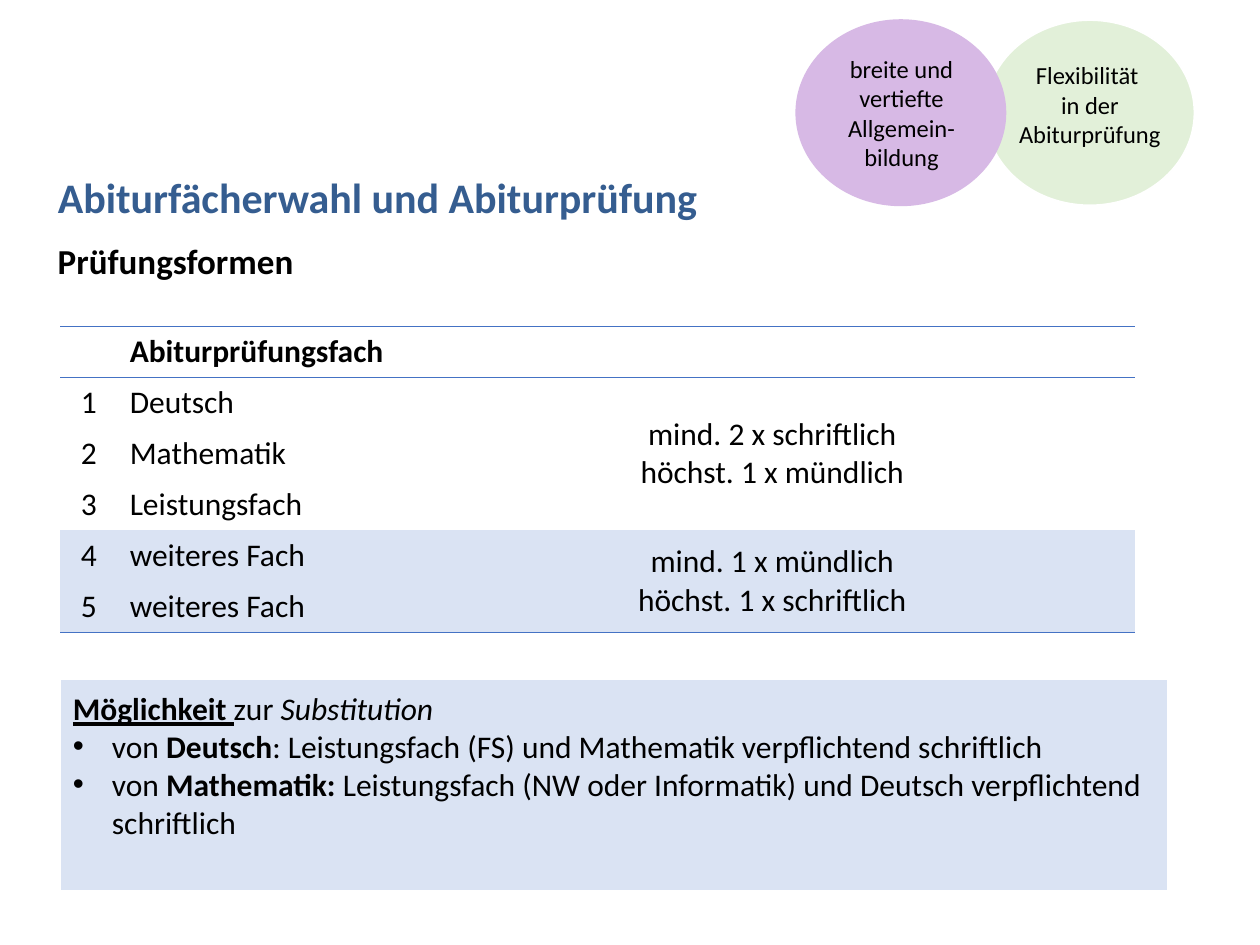
from lxml import etree
from pptx import Presentation
from pptx.dml.color import RGBColor
from pptx.enum.shapes import MSO_SHAPE
from pptx.enum.text import MSO_ANCHOR, MSO_AUTO_SIZE, PP_ALIGN
from pptx.oxml import parse_xml
from pptx.util import Inches, Pt

OVAL, RECT = MSO_SHAPE.OVAL, MSO_SHAPE.RECTANGLE
TOP, MID = MSO_ANCHOR.TOP, MSO_ANCHOR.MIDDLE
LEFT, CENTER = PP_ALIGN.LEFT, PP_ALIGN.CENTER
NS = "http://schemas.openxmlformats.org/drawingml/2006/main"
NO_GRID = "{2D5ABB26-0587-4C30-8999-92F81FD0307C}"
BLUE, PALE = "4472C4", "DAE3F3"


def color(text):
    return RGBColor.from_string(text)


def write(frame, paras, size, align=LEFT, anchor=TOP, tint="000000"):
    """Fill a frame with paragraphs, each a list of (text, font values)."""
    frame.word_wrap = True
    frame.vertical_anchor = anchor
    for i, runs in enumerate(paras):
        para = frame.paragraphs[0] if i == 0 else frame.add_paragraph()
        para.alignment = align
        for text, form in runs:
            # A line break inside a paragraph is a vertical tab
            for j, part in enumerate(text.split("\v")):
                if j:
                    para.add_line_break()
                run = para.add_run()
                run.text = part
                run.font.color.rgb = color(tint)
                base = {"name": "Calibri", "size": Pt(size)}
                for key, value in {**base, **form}.items():
                    setattr(run.font, key, value)


deck = Presentation()
deck.slide_width, deck.slide_height = Inches(10), Inches(7.5)
slide = deck.slides.add_slide(deck.slide_layouts[5])
shapes = slide.shapes
bold = {"bold": True}

# Headings
title = shapes.title
title.left, title.top = Inches(0.36), Inches(1.31)
title.width, title.height = Inches(9.37), Inches(0.87)
title.text_frame.auto_size = MSO_AUTO_SIZE.NONE
write(title.text_frame, [[("Abiturfächerwahl und Abiturprüfung", bold)]], 24, tint="355D90")
sub = shapes.add_textbox(Inches(0.36), Inches(1.85), Inches(9.05), Inches(0.44))
write(sub.text_frame, [[("Prüfungsformen", bold)]], 20)

# Table of exam subjects
names = ["Deutsch", "Mathematik", "Leistungsfach", "weiteres Fach", "weiteres Fach"]
frame = shapes.add_table(6, 3, Inches(0.48), Inches(2.59), Inches(8.53), Inches(2.43))
table = frame.table
table.first_row = table.horz_banding = False
frame.element.find(f".//{{{NS}}}tableStyleId").text = NO_GRID
for col, width in zip(table.columns, [0.45, 2.32, 5.76]):
    col.width = Inches(width)
for row in table.rows:
    row.height = Inches(0.405)

table.cell(0, 1).merge(table.cell(0, 2))
write(table.cell(0, 1).text_frame, [[("Abiturprüfungsfach", bold)]], 18)
for i, name in enumerate(names, 1):
    write(table.cell(i, 0).text_frame, [[(str(i), {})]], 18, CENTER)
    write(table.cell(i, 1).text_frame, [[(name, {})]], 18)

rules = [
    (1, 3, "mind. 2 x schriftlich", "höchst. 1 x mündlich"),
    (4, 5, "mind. 1 x mündlich", "höchst. 1 x schriftlich"),
]
for first, last, *lines in rules:
    cell = table.cell(first, 2)
    cell.merge(table.cell(last, 2))
    write(cell.text_frame, [[(line, {})] for line in lines], 18, CENTER)
    cell.vertical_anchor = MID

for r in range(6):
    for c in range(3):
        cell = table.cell(r, c)
        if r >= 4:
            cell.fill.solid()
            cell.fill.fore_color.rgb = color(PALE)
        else:
            cell.fill.background()
        # The merged cell takes its lower border from its first row
        low = r in (0, 5) or (r, c) == (4, 2)
        edges = ["lnT"] * (r == 0) + ["lnB"] * low
        for k, edge in enumerate(edges):
            line = parse_xml(
                f'<a:{edge} xmlns:a="{NS}" w="12700"><a:solidFill>'
                f'<a:srgbClr val="{BLUE}"/></a:solidFill></a:{edge}>')
            cell._tc.get_or_add_tcPr().insert(k, line)

# Filled shapes: kind, left, top, width, height, fill, line
forms = [
    (RECT, 0.48, 5.39, 8.79, 1.68, PALE, "FFFFFF"),
    (OVAL, 7.82, 0.16, 1.66, 1.47, "E2F0D9", "FFFFFF"),
    (OVAL, 6.32, 0.16, 1.66, 1.47, "D7B9E5", "D7B9E5"),
]
drawn = []
for kind, x, y, w, h, fill, edge in forms:
    shape = shapes.add_shape(kind, Inches(x), Inches(y), Inches(w), Inches(h))
    shape.shadow.inherit = False
    shape.fill.solid()
    shape.fill.fore_color.rgb = color(fill)
    shape.line.color.rgb = color(edge)
    shape.line.width = Pt(1)
    drawn.append(shape)

# Note on substitution
note = drawn[0].text_frame
note.margin_top = Inches(0.08)
write(note, [
    [("Möglichkeit ", {"bold": True, "underline": True}), ("zur ", {}),
     ("Substitution", {"italic": True})],
    [("von ", {}), ("Deutsch", bold),
     (": Leistungsfach (FS) und Mathematik verpflichtend schriftlich", {})],
    [("von ", {}), ("Mathematik:", bold),
     (" Leistungsfach (NW oder Informatik) und Deutsch verpflichtend schriftlich", {})],
], 18)
for para in note.paragraphs[1:]:
    props = para._p.get_or_add_pPr()
    props.set("marL", str(Inches(0.31)))
    props.set("indent", str(-Inches(0.31)))
    etree.SubElement(props, f"{{{NS}}}buFont", typeface="Arial")
    etree.SubElement(props, f"{{{NS}}}buChar", char="•")

# Labels of the two circles
labels = [
    (7.94, 0.43, 1.42, 0.81, "Flexibilität \vin der Abiturprüfung"),
    (6.5, 0.38, 1.31, 1.04, "breite und vertiefte Allgemein-bildung"),
]
for x, y, w, h, text in labels:
    box = shapes.add_textbox(Inches(x), Inches(y), Inches(w), Inches(h))
    write(box.text_frame, [[(text, {})]], 14, CENTER)

deck.save("out.pptx")
